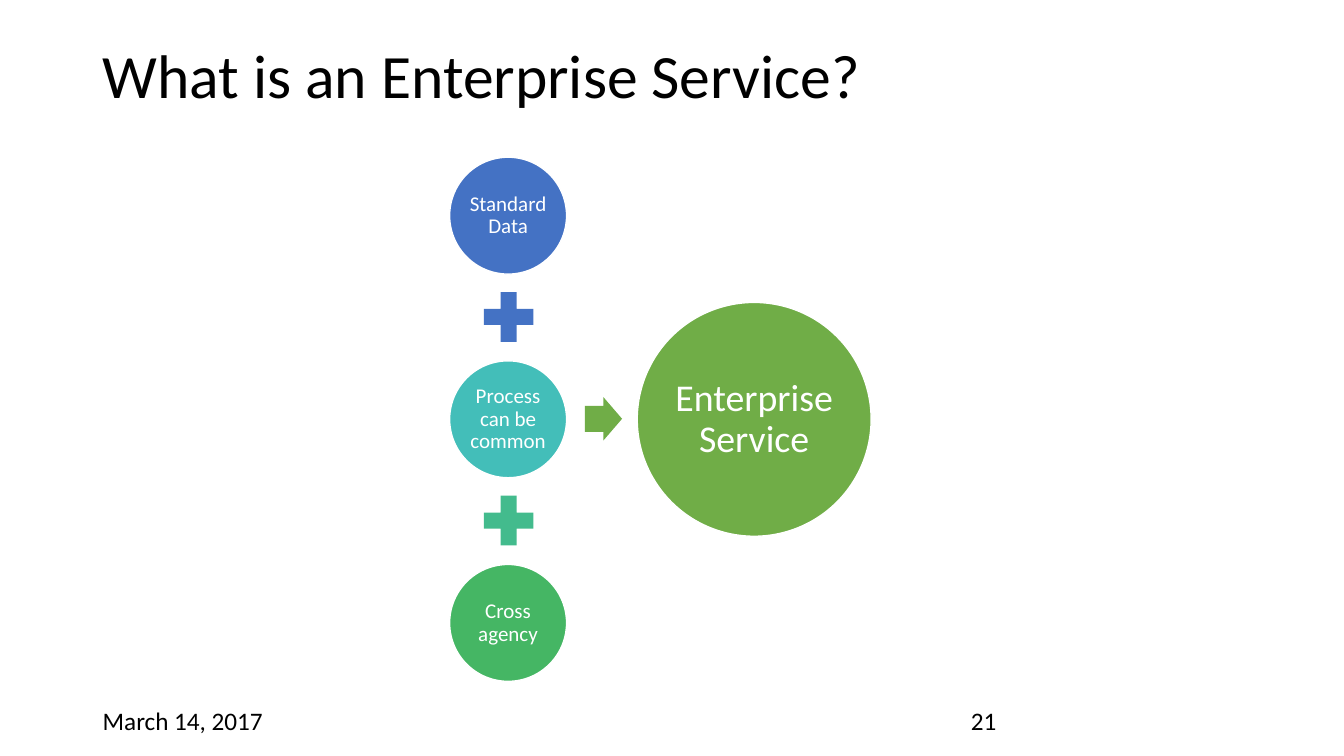
from pptx import Presentation
from pptx.dml.color import RGBColor
from pptx.enum.shapes import MSO_SHAPE
from pptx.enum.text import MSO_ANCHOR, PP_ALIGN
from pptx.util import Pt

PX = 9144  # EMU per px, 100 px to the inch
OVAL, PLUS, ARROW = MSO_SHAPE.OVAL, MSO_SHAPE.MATH_PLUS, MSO_SHAPE.RIGHT_ARROW
MIDDLE, CENTER = MSO_ANCHOR.MIDDLE, PP_ALIGN.CENTER


def set_text(tf, text, size, color, spacing=None):
    tf.word_wrap = True
    p = tf.paragraphs[0]
    p.text = text
    p.line_spacing = spacing
    p.font.name = "Calibri"
    p.font.size = Pt(size)
    p.font.color.rgb = RGBColor.from_string(color)
    return p


def add_figure(kind, box, fill, text="", size=15):
    """Add a filled shape; ovals get a white outline and a centred label."""
    sp = s.shapes.add_shape(kind, *(v * PX for v in box))
    sp.shadow.inherit = False
    sp.fill.solid()
    sp.fill.fore_color.rgb = RGBColor.from_string(fill)
    if kind != OVAL:
        sp.line.fill.background()
        return sp
    sp.line.color.rgb = RGBColor.from_string("FFFFFF")
    sp.line.width = Pt(1)
    tf = sp.text_frame
    tf.vertical_anchor = MIDDLE
    tf.margin_left = tf.margin_right = tf.margin_top = tf.margin_bottom = 0
    set_text(tf, text, size, "FFFFFF", 0.9).alignment = CENTER
    return sp


prs = Presentation()
prs.slide_width, prs.slide_height = 1333 * PX, 750 * PX
s = prs.slides.add_slide(prs.slide_layouts[6])

# Title, page number and date
for box, text, size, spacing in [
    ((92, 40, 1150, 145), "What is an Enterprise Service?", 44, 0.9),
    ((953, 695, 95, 40), "21", 18, None),
    ((92, 695, 300, 40), "March 14, 2017", 18, None),
]:
    tb = s.shapes.add_textbox(*(v * PX for v in box))
    set_text(tb.text_frame, text, size, "000000", spacing)

# Column of ingredients joined by plus signs
TOP, STEP = 156, 202
ingredients = [("Standard Data", "4472C4"), ("Process can be common", "43BEB9"),
               ("Cross agency", "45B664")]
for i, (label, color) in enumerate(ingredients):
    add_figure(OVAL, (446, TOP + i * STEP, 116, 116), color, label)
for i, color in enumerate(["4472C4", "43BB8D"]):
    add_figure(PLUS, (471, TOP + 125 + i * STEP, 67, 67), color)

# Result
arrow = add_figure(ARROW, (580, 394, 37, 43), "70AD47")
arrow.adjustments[0], arrow.adjustments[1] = 0.6, 0.5
add_figure(OVAL, (632, 300, 232, 232), "70AD47", "Enterprise Service", 27)

prs.save("out.pptx")
